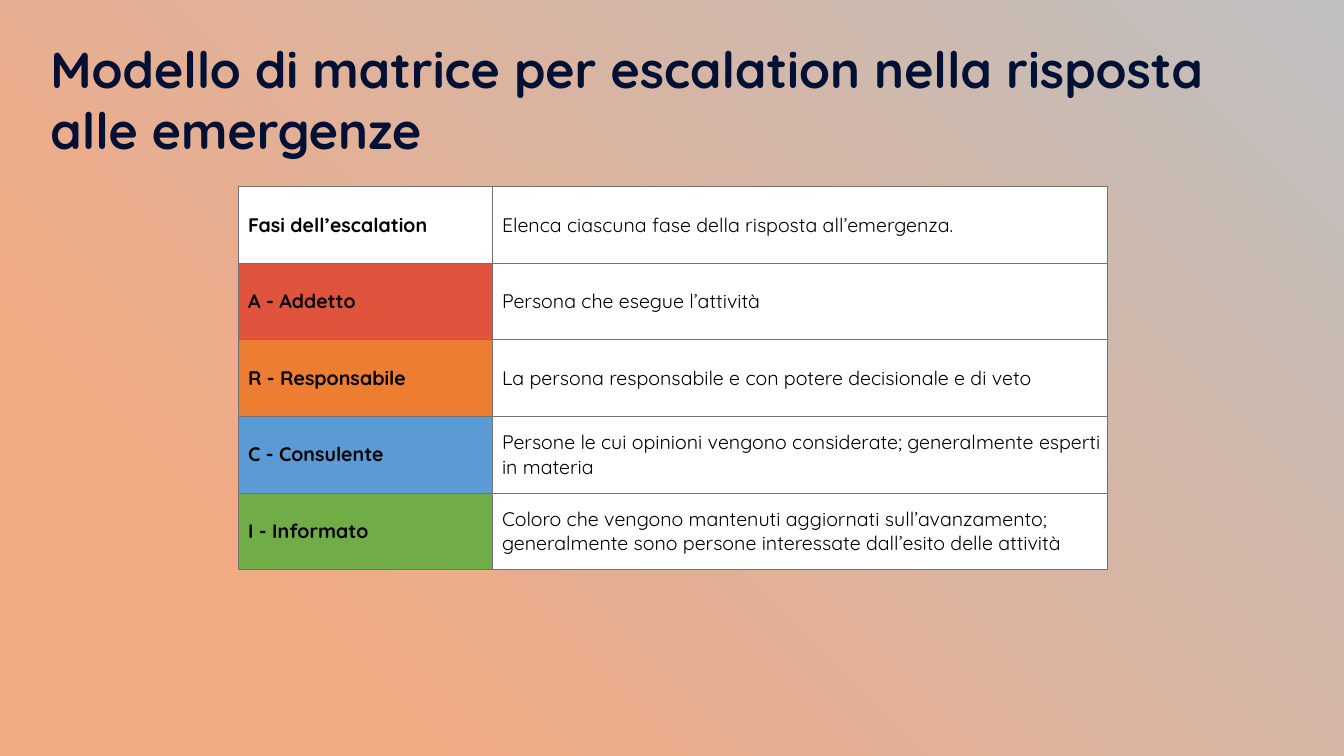
from lxml.etree import SubElement
from pptx import Presentation
from pptx.dml.color import RGBColor
from pptx.enum.text import MSO_ANCHOR, MSO_AUTO_SIZE, PP_ALIGN
from pptx.oxml.ns import qn
from pptx.util import Inches, Pt

WHITE = RGBColor(0xFF, 0xFF, 0xFF)
BLACK = RGBColor(0x00, 0x00, 0x00)
NAVY = RGBColor(0x01, 0x10, 0x33)
RED = RGBColor(0xE0, 0x53, 0x3C)
ORANGE = RGBColor(0xED, 0x7D, 0x31)
BLUE = RGBColor(0x5B, 0x9B, 0xD5)
GREEN = RGBColor(0x70, 0xAD, 0x47)
BORDER = RGBColor(0x73, 0x73, 0x73)
PEACH = RGBColor(0xF2, 0xAA, 0x84)
GREY = RGBColor(0xBF, 0xBF, 0xBF)

FONT = "Quicksand"
TITLE = "Modello di matrice per escalation nella risposta alle emergenze"
ROLES = [
    ("Fasi dell’escalation", "Elenca ciascuna fase della risposta all’emergenza.", WHITE),
    ("A - Addetto", "Persona che esegue l’attività", RED),
    ("R - Responsabile", "La persona responsabile e con potere decisionale e di veto", ORANGE),
    ("C - Consulente",
     "Persone le cui opinioni vengono considerate; generalmente esperti in materia", BLUE),
    ("I - Informato",
     "Coloro che vengono mantenuti aggiornati sull’avanzamento; "
     "generalmente sono persone interessate dall’esito delle attività", GREEN),
]
BACKGROUND_STOPS = [(0.19, PEACH), (1, GREY)]
COLUMN_WIDTHS = (2.52, 6.1)
ROW_HEIGHT = 0.76
TABLE_LEFT, TABLE_TOP = 2.36, 1.85


def set_attributes(target, values):
    for name, value in values.items():
        setattr(target, name, value)


def format_font(font, size, color, bold):
    set_attributes(font, {"name": FONT, "size": Pt(size), "bold": bold})
    font.color.rgb = color


def paint_background(slide):
    """Fill the slide with a circular gradient centred on the bottom left corner."""
    fill = slide.background.fill
    fill.gradient()
    for stop, (position, color) in zip(fill.gradient_stops, BACKGROUND_STOPS):
        stop.position = position
        stop.color.rgb = color
    gradient = next(slide.element.iter(qn("a:gradFill")))
    linear = gradient.find(qn("a:lin"))
    if linear is not None:
        gradient.remove(linear)
    circle = SubElement(gradient, qn("a:path"), path="circle")
    SubElement(circle, qn("a:fillToRect"), t="100000", r="100000")
    gradient.find(qn("a:gsLst")).addnext(circle)


def add_borders(cell):
    properties = cell._tc.get_or_add_tcPr()
    for side in ("a:lnL", "a:lnR", "a:lnT", "a:lnB"):
        line = SubElement(properties, qn(side), w=str(Pt(0.5)))
        solid = SubElement(line, qn("a:solidFill"))
        SubElement(solid, qn("a:srgbClr"), val=str(BORDER))


def fill_cell(cell, text, color, bold):
    add_borders(cell)
    set_attributes(cell, {
        "text": text, "vertical_anchor": MSO_ANCHOR.MIDDLE, "margin_left": Inches(0.1),
        "margin_right": 0, "margin_top": 0, "margin_bottom": 0,
    })
    cell.fill.solid()
    cell.fill.fore_color.rgb = color
    format_font(cell.text_frame.paragraphs[0].runs[0].font, 14, BLACK, bold)


def add_title(slide):
    title = slide.shapes.title
    set_attributes(title, {"left": Inches(0.4), "top": Inches(0.28),
                           "width": Inches(12.1), "height": Inches(0.81)})
    frame = title.text_frame
    margins = {f"margin_{side}": Inches(0.1) for side in ("left", "right", "top", "bottom")}
    set_attributes(frame, {"text": TITLE, "word_wrap": True, "vertical_anchor": MSO_ANCHOR.TOP,
                           "auto_size": MSO_AUTO_SIZE.SHAPE_TO_FIT_TEXT, **margins})
    paragraph = frame.paragraphs[0]
    paragraph.alignment = PP_ALIGN.LEFT
    format_font(paragraph.runs[0].font, 36, NAVY, True)


def add_role_table(slide):
    table = slide.shapes.add_table(
        len(ROLES), len(COLUMN_WIDTHS), Inches(TABLE_LEFT), Inches(TABLE_TOP),
        Inches(sum(COLUMN_WIDTHS)), Inches(ROW_HEIGHT * len(ROLES))).table
    set_attributes(table, {"first_row": False, "horz_banding": False})
    for column, width in zip(table.columns, COLUMN_WIDTHS):
        column.width = Inches(width)
    for row, (role, description, color) in zip(table.rows, ROLES):
        row.height = Inches(ROW_HEIGHT)
        fill_cell(row.cells[0], role, color, True)
        fill_cell(row.cells[1], description, WHITE, False)


def main():
    presentation = Presentation()
    set_attributes(presentation, {"slide_width": Inches(13.33), "slide_height": Inches(7.5)})
    slide = presentation.slides.add_slide(presentation.slide_layouts[5])
    paint_background(slide)
    add_title(slide)
    add_role_table(slide)
    presentation.save("out.pptx")


if __name__ == "__main__":
    main()
